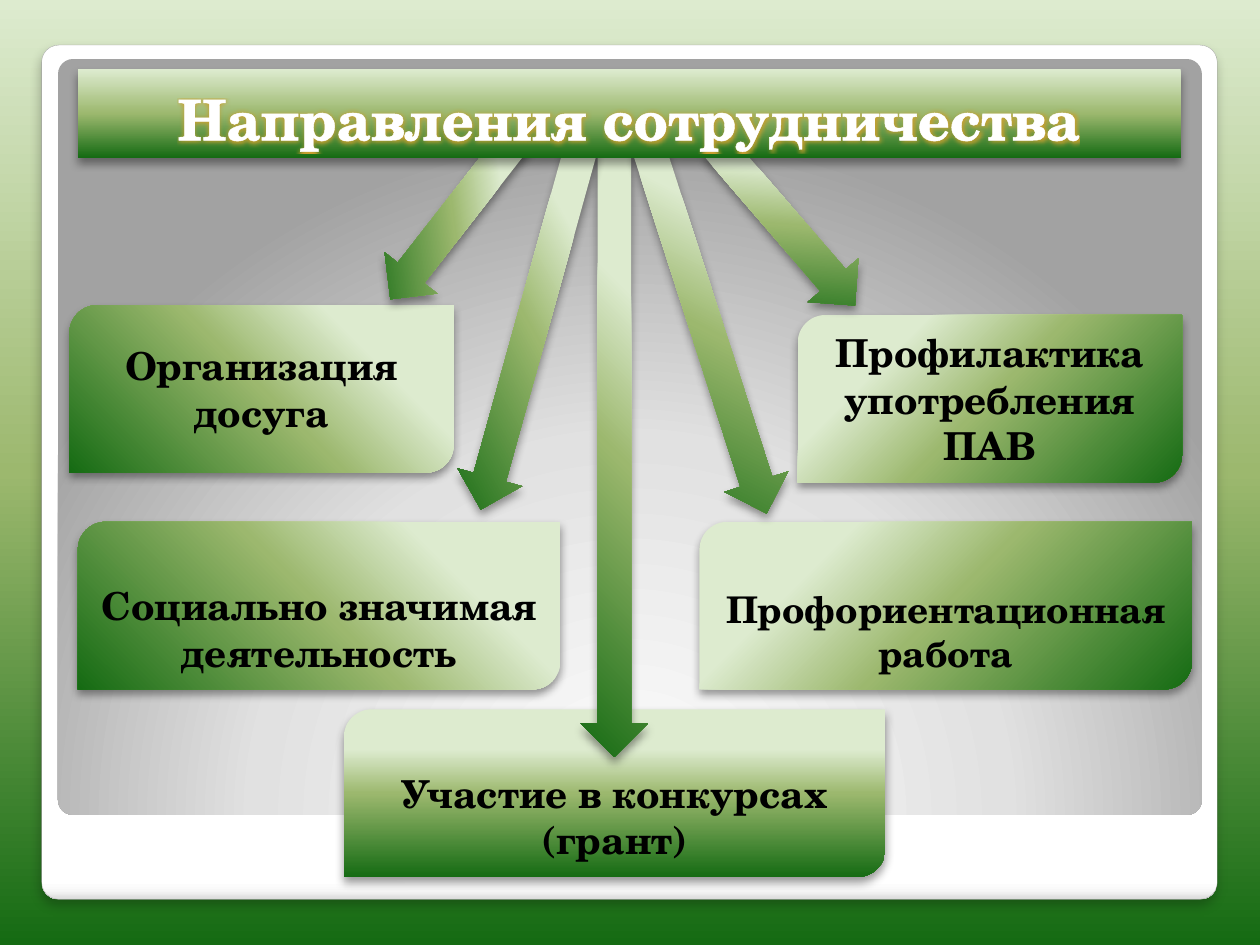
from lxml.etree import SubElement
from pptx import Presentation
from pptx.dml.color import RGBColor
from pptx.enum.shapes import MSO_SHAPE
from pptx.enum.text import MSO_ANCHOR, PP_ALIGN
from pptx.oxml import parse_xml
from pptx.oxml.ns import nsdecls, qn
from pptx.util import Cm, Pt

COLORS = {"pale": "DDEBCF", "olive": "9CB86E", "green": "156B13", "white": "FFFFFF",
          "black": "000000", "edge": "A4A4A4", "gold": "C8A030"}
FULL_STOPS = [(0, COLORS["pale"]), (50, COLORS["olive"]), (100, COLORS["green"])]
LATE_STOPS = [(24, COLORS["pale"])] + FULL_STOPS[1:]
FRAME_STOPS = [(0, "FFFFFF"), (98, "FFFFFF"), (99, "F7F7F7"), (100, "DADADA")]
PANEL_STOPS = [(0, "FFFFFF"), (55, "E1E1E1"), (100, "A2A2A2")]
CIRCLE = ('<a:path path="circle"><a:fillToRect l="50000" t="175000" '
          'r="50000" b="-75000"/></a:path>')
FONT = "TeX Gyre Schola"


def paint_gradient(fill, owner, stops, angle):
    """Fill owner with a clockwise linear gradient, or a circular one if angle is None."""
    fill.solid()
    solid = next(owner.iter(qn("a:solidFill")))
    colors = "".join(f'<a:gs pos="{pos * 1000}"><a:srgbClr val="{color}"/></a:gs>'
                     for pos, color in stops)
    course = CIRCLE if angle is None else f'<a:lin ang="{angle * 60000}" scaled="0"/>'
    solid.getparent().replace(solid, parse_xml(
        f'<a:gradFill {nsdecls("a")} rotWithShape="1">'
        f'<a:gsLst>{colors}</a:gsLst>{course}</a:gradFill>'))


def add_box(kind, place, stops, angle, shadow=(40, 5.2, 3), text="", size=22, color="black"):
    """Add a gradient shape; shadow holds opacity in percent, blur and distance in points."""
    box = page.shapes.add_shape(kind, *[Cm(length) for length in place])
    properties = box._element.spPr
    paint_gradient(box.fill, properties, stops, angle)
    box.line.fill.background()
    box.shadow.inherit = False
    if shadow:
        opacity, blur, distance = shadow
        properties.find(qn("a:effectLst")).append(parse_xml(
            f'<a:outerShdw {nsdecls("a")} blurRad="{Pt(blur)}" dist="{Pt(distance)}" '
            f'dir="5400000" algn="t" rotWithShape="0"><a:srgbClr val="{COLORS["black"]}">'
            f'<a:alpha val="{opacity * 1000}"/></a:srgbClr></a:outerShdw>'))
    if text:
        box.text_frame.word_wrap = True
        box.text_frame.vertical_anchor = MSO_ANCHOR.BOTTOM
        para = box.text_frame.paragraphs[0]
        para.alignment = PP_ALIGN.CENTER
        span = para.add_run()
        span.text = text
        for name, value in {"name": FONT, "size": Pt(size), "bold": True}.items():
            setattr(span.font, name, value)
        span.font.color.rgb = RGBColor.from_string(COLORS[color])
    return box


deck = Presentation()
deck.slide_width, deck.slide_height = Cm(25.4), Cm(19.05)
page = deck.slides.add_slide(deck.slide_layouts[6])
paint_gradient(page.background.fill, page._element, FULL_STOPS, 90)

# White frame and grey panel
frame = add_box(MSO_SHAPE.ROUNDED_RECTANGLE, (0.84, 0.91, 23.7, 17.22), FRAME_STOPS, 90,
                shadow=(25, 6, 4))
frame.line.color.rgb = RGBColor.from_string(COLORS["edge"])
frame.line.width = Pt(0.16)
panel = add_box(MSO_SHAPE.ROUNDED_RECTANGLE, (1.17, 1.19, 23.06, 15.24), PANEL_STOPS, None,
                shadow=None)
for box in (frame, panel):
    box.adjustments[0] = 0.02

# Areas of cooperation: text, left, top, width, gradient angle, text size, bottom inset
cards = [
    ("Организация досуга", 1.4, 6.15, 7.75, 135, 22, 0.6),
    ("Профилактика употребления ПАВ", 16.08, 6.35, 7.75, 45, 22, 0.13),
    ("Участие в конкурсах (грант)", 6.93, 14.3, 10.92, 90, 22, 0.13),
    ("Социально значимая деятельность", 1.57, 10.52, 9.73, 135, 22, 0.13),
    ("Профориентационная работа", 14.1, 10.52, 9.93, 45, 21, 0.13),
]
for text, left, top, width, angle, size, inset in cards:
    card = add_box(MSO_SHAPE.ROUND_2_DIAG_RECTANGLE, (left, top, width, 3.38),
                   LATE_STOPS, angle, text=text, size=size)
    card.text_frame.margin_bottom = Cm(inset)

# Arrows from the title to the cards: left, top, length, rotation
arrows = [
    (11.71, 2.97, 12.29, 0),
    (10.03, 2.84, 7.57, 15.5),
    (13.59, 2.79, 7.75, 342.1),
    (8.46, 2.36, 4.11, 38),
    (15.16, 2.39, 4.29, 319.2),
]
for left, top, length, rotation in arrows:
    arrow = add_box(MSO_SHAPE.DOWN_ARROW, (left, top, 1.35, length), LATE_STOPS, 135)
    arrow.rotation = rotation

# Title with outlined letters
title = add_box(MSO_SHAPE.RECTANGLE, (1.57, 1.4, 22.23, 1.78), FULL_STOPS, 90,
                text="Направления сотрудничества", size=32, color="white")
letters = title.text_frame.paragraphs[0].runs[0].font._element
outline = parse_xml(f'<a:ln {nsdecls("a")} w="{Pt(0.75)}"/>')
letters.insert(0, outline)
SubElement(SubElement(outline, qn("a:solidFill")), qn("a:srgbClr"), val=COLORS["white"])
glow = parse_xml(f'<a:effectLst {nsdecls("a")}><a:glow rad="{Pt(2)}">'
                 f'<a:srgbClr val="{COLORS["gold"]}"/></a:glow></a:effectLst>')
letters.find(qn("a:solidFill")).addnext(glow)

deck.save("out.pptx")
